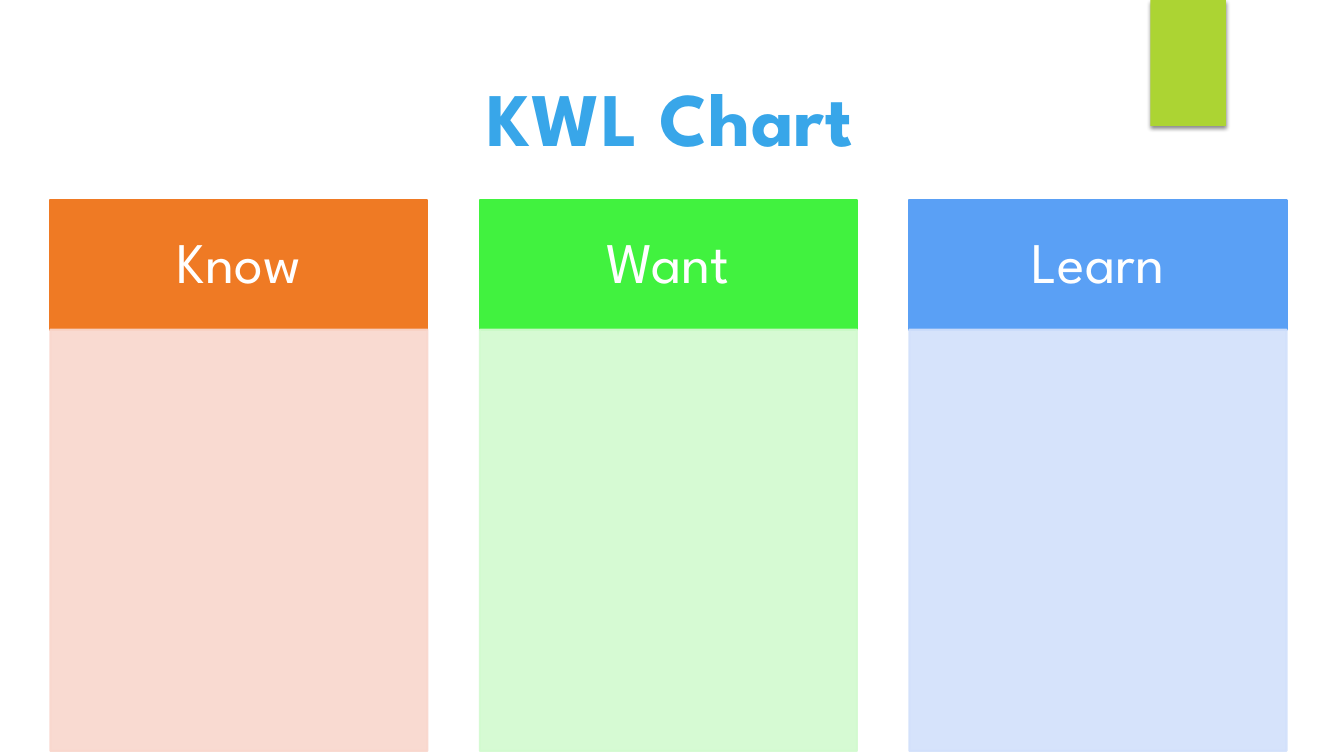
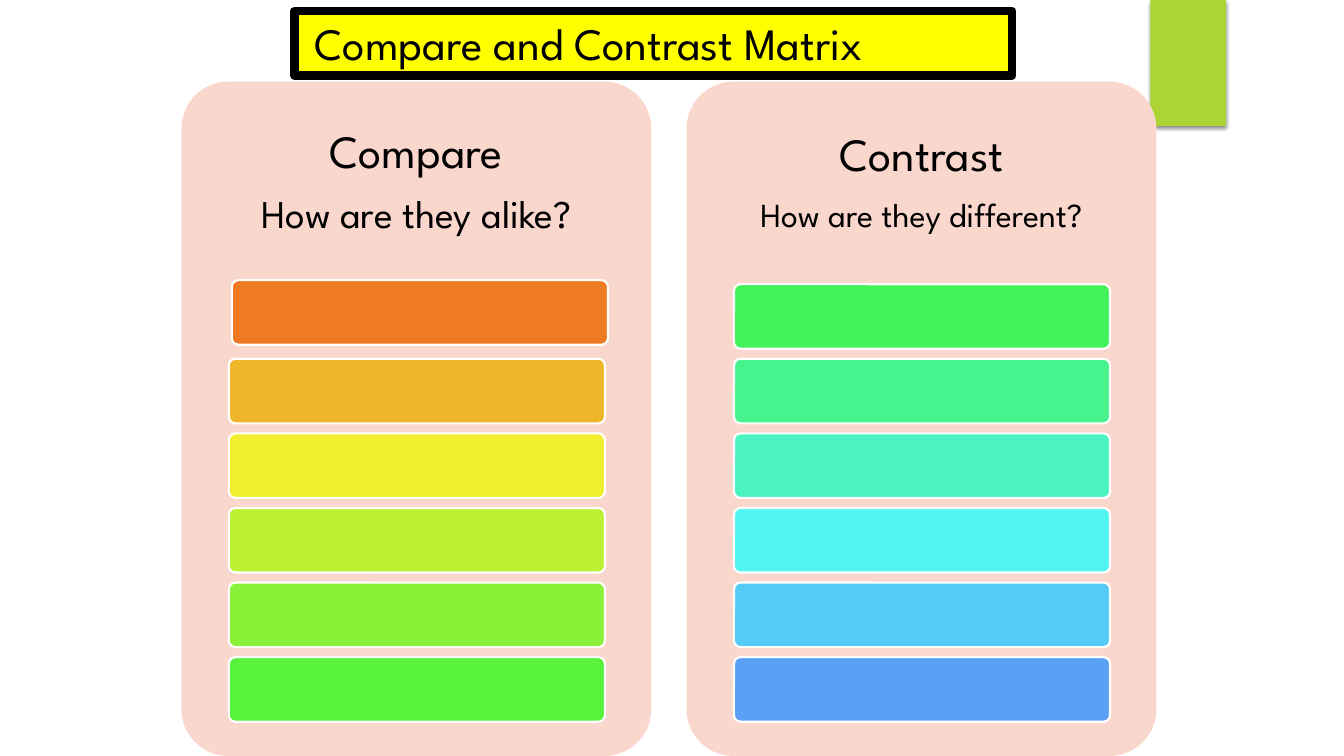
from pptx import Presentation
from pptx.dml.color import RGBColor
from pptx.enum.shapes import MSO_SHAPE
from pptx.enum.text import MSO_ANCHOR, MSO_AUTO_SIZE, PP_ALIGN
from pptx.oxml.ns import qn
from pptx.util import Inches, Pt
from lxml.etree import SubElement

FONT = "League Spartan"
COLORS = {
    "white": "FFFFFF", "black": "000000", "yellow": "FFFF00",
    "title": "38A6E9", "tag": "ACD433", "panel": "F9D7CD",
}
KWL_COLUMNS = [
    ("Know", "EF7A24", "F9D7CD"),
    ("Want", "41F23F", "D2FACF"),
    ("Learn", "5AA0F5", "D2E0FB"),
]
MATRIX_PANELS = [
    ("Compare", "How are they alike?", 28, 1.8, (0.03, -0.04),
     ["EF7A24", "F0B629", "F0EF2E", "BCF133", "89F137", "59F23C"]),
    ("Contrast", "How are they different?", 24, 6.81, (0, 0),
     ["41F258", "46F38D", "4BF3C0", "50F4F1", "55CAF5", "5AA0F5"]),
]


def set_all(target, values):
    for name, value in values.items():
        setattr(target, name, value)


def place(shape, box):
    names = ("left", "top", "width", "height")
    set_all(shape, {name: Inches(length) for name, length in zip(names, box)})


def paint(shape, fill, line=None, line_width=1.5):
    shape.fill.solid()
    shape.fill.fore_color.rgb = RGBColor.from_string(fill)
    if line:
        shape.line.color.rgb = RGBColor.from_string(line)
        shape.line.width = Pt(line_width)
    else:
        shape.line.fill.background()


def add_box(slide, box, fill, line=None, kind=MSO_SHAPE.RECTANGLE):
    shape = slide.shapes.add_shape(kind, *map(Inches, box))
    if kind == MSO_SHAPE.ROUNDED_RECTANGLE:
        shape.adjustments[0] = 0.1
    shape.shadow.inherit = False
    paint(shape, fill, line)
    return shape


def set_opacity(shape, percent):
    for color in shape.element.spPr.iter(qn("a:srgbClr")):
        SubElement(color, qn("a:alpha"), val=str(percent * 1000))


def style_font(paragraph, size, color, bold=False):
    set_all(paragraph.font, {"name": FONT, "size": Pt(size), "bold": bold})
    paragraph.font.color.rgb = RGBColor.from_string(color)


def write_lines(shape, lines, color, margins):
    frame = shape.text_frame
    set_all(frame, {"word_wrap": True, "vertical_anchor": MSO_ANCHOR.MIDDLE})
    names = ("margin_left", "margin_top", "margin_right", "margin_bottom")
    set_all(frame, {name: Inches(gap) for name, gap in zip(names, margins)})
    for index, (text, size) in enumerate(lines):
        paragraph = frame.add_paragraph() if index else frame.paragraphs[0]
        paragraph.text = text
        set_all(paragraph, {
            "alignment": PP_ALIGN.CENTER,
            "line_spacing": 0.9,
            "space_after": Pt(round(size * 0.35)),
        })
        style_font(paragraph, size, color)


def set_title(slide, text, box, size, color, alignment, **options):
    title = slide.shapes.title
    place(title, box)
    title.text = text
    set_all(title.text_frame, {
        "auto_size": MSO_AUTO_SIZE.NONE,
        "vertical_anchor": MSO_ANCHOR.TOP,
        "word_wrap": options.get("wrap", True),
        "margin_left": Inches(options.get("margin_left", 0.1)),
    })
    paragraph = title.text_frame.paragraphs[0]
    paragraph.alignment = alignment
    style_font(paragraph, size, color, options.get("bold", False))
    return title


def add_layout_tag(slide):
    tag = add_box(slide, (11.41, 0, 0.75, 1.25), COLORS["tag"])
    effects = tag.element.spPr.find(qn("a:effectLst"))
    shadow = SubElement(effects, qn("a:outerShdw"), blurRad=str(Pt(3)),
                        dist=str(Pt(2)), dir="5400000", rotWithShape="0")
    color = SubElement(shadow, qn("a:srgbClr"), val=COLORS["black"])
    SubElement(color, qn("a:alpha"), val="45000")
    tag.element.nvSpPr.cNvPr.set("id", "20")
    slide.slide_layout.shapes.element.append(tag.element)


def build_kwl_slide(slide):
    title = set_title(slide, "KWL Chart", (4.66, 0.65, 3.98, 1.01), 54,
                      COLORS["title"], PP_ALIGN.CENTER, bold=True, wrap=False)
    run = title.text_frame.paragraphs[0].runs[0]
    run.font.size = Pt(54)
    run.font.element.set("spc", "50") if hasattr(run.font, "element") else run._r.get_or_add_rPr().set("spc", "50")
    for index, (heading, header_color, body_color) in enumerate(KWL_COLUMNS):
        left = 0.5 + index * 4.26
        header = add_box(slide, (left, 1.98, 3.74, 1.29), header_color, header_color)
        write_lines(header, [(heading, 41)], COLORS["white"], (0.32, 0.18, 0.32, 0.18))
        body = add_box(slide, (left, 3.27, 3.74, 4.18), body_color, body_color)
        set_opacity(body, 90)


def build_matrix_slide(slide):
    title = set_title(slide, "Compare and Contrast Matrix", (2.92, 0.11, 7.12, 0.64), 32,
                      COLORS["black"], PP_ALIGN.LEFT, margin_left=0.2)
    paint(title, COLORS["yellow"], COLORS["black"], 6)
    rounded = MSO_SHAPE.ROUNDED_RECTANGLE
    for heading, question, question_size, left, first_shift, bar_colors in MATRIX_PANELS:
        panel = add_box(slide, (left, 0.81, 4.66, 6.69), COLORS["panel"], kind=rounded)
        write_lines(panel, [(heading, 33), (question, question_size)],
                    COLORS["black"], (0.14, 0.14, 0.14, 4.82))
        for row, bar_color in enumerate(bar_colors):
            shift_x, shift_y = (0, 0) if row else first_shift
            box = (left + 0.47 + shift_x, 2.82 + row * 0.74 + shift_y, 3.73, 0.64)
            add_box(slide, box, bar_color, COLORS["white"], rounded)


def main():
    presentation = Presentation()
    set_all(presentation, {"slide_width": Inches(13.33), "slide_height": Inches(7.5)})
    layout = presentation.slide_layouts[5]
    kwl_slide, matrix_slide = [presentation.slides.add_slide(layout) for _ in range(2)]
    add_layout_tag(kwl_slide)
    build_kwl_slide(kwl_slide)
    build_matrix_slide(matrix_slide)
    presentation.save("out.pptx")


if __name__ == "__main__":
    main()
